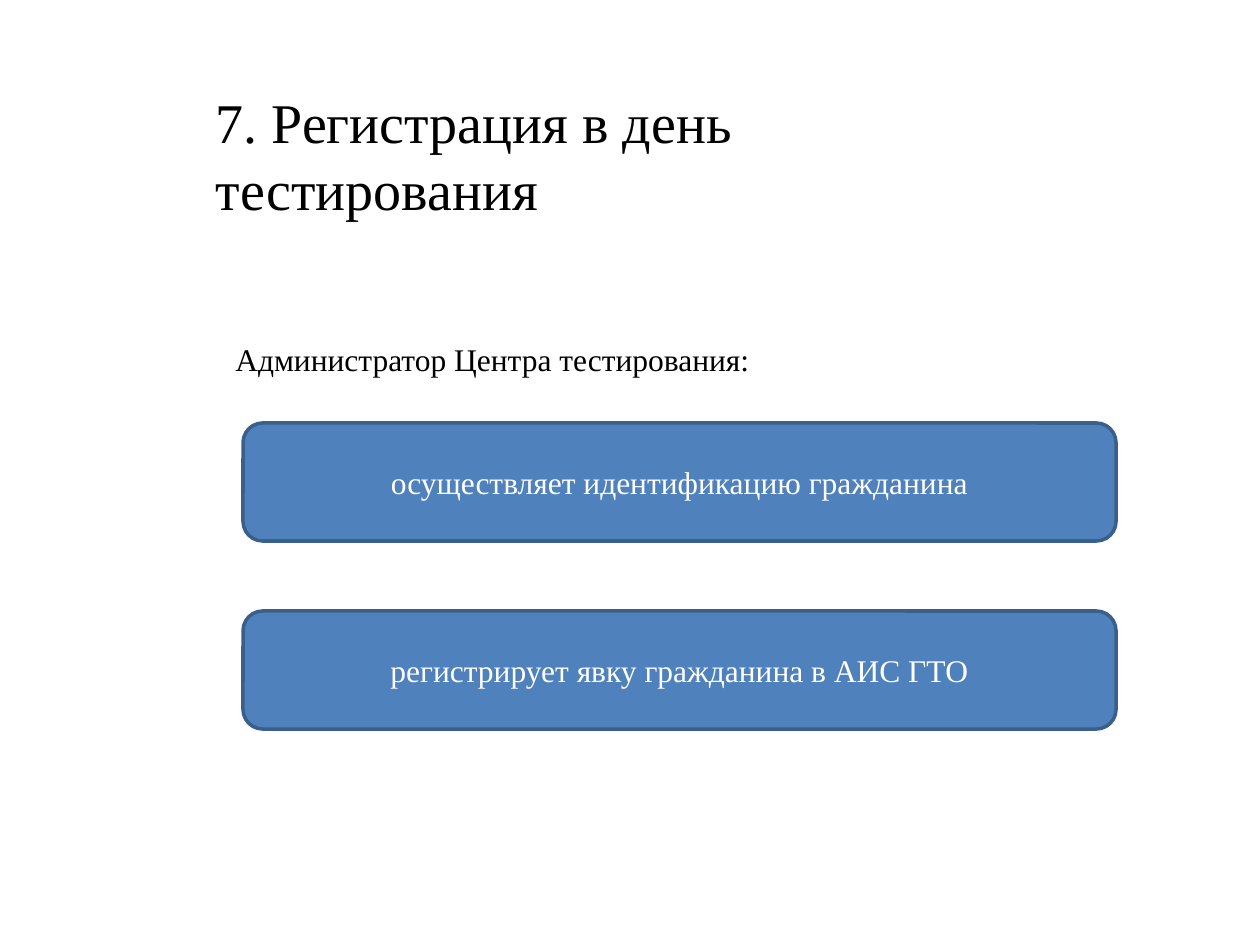
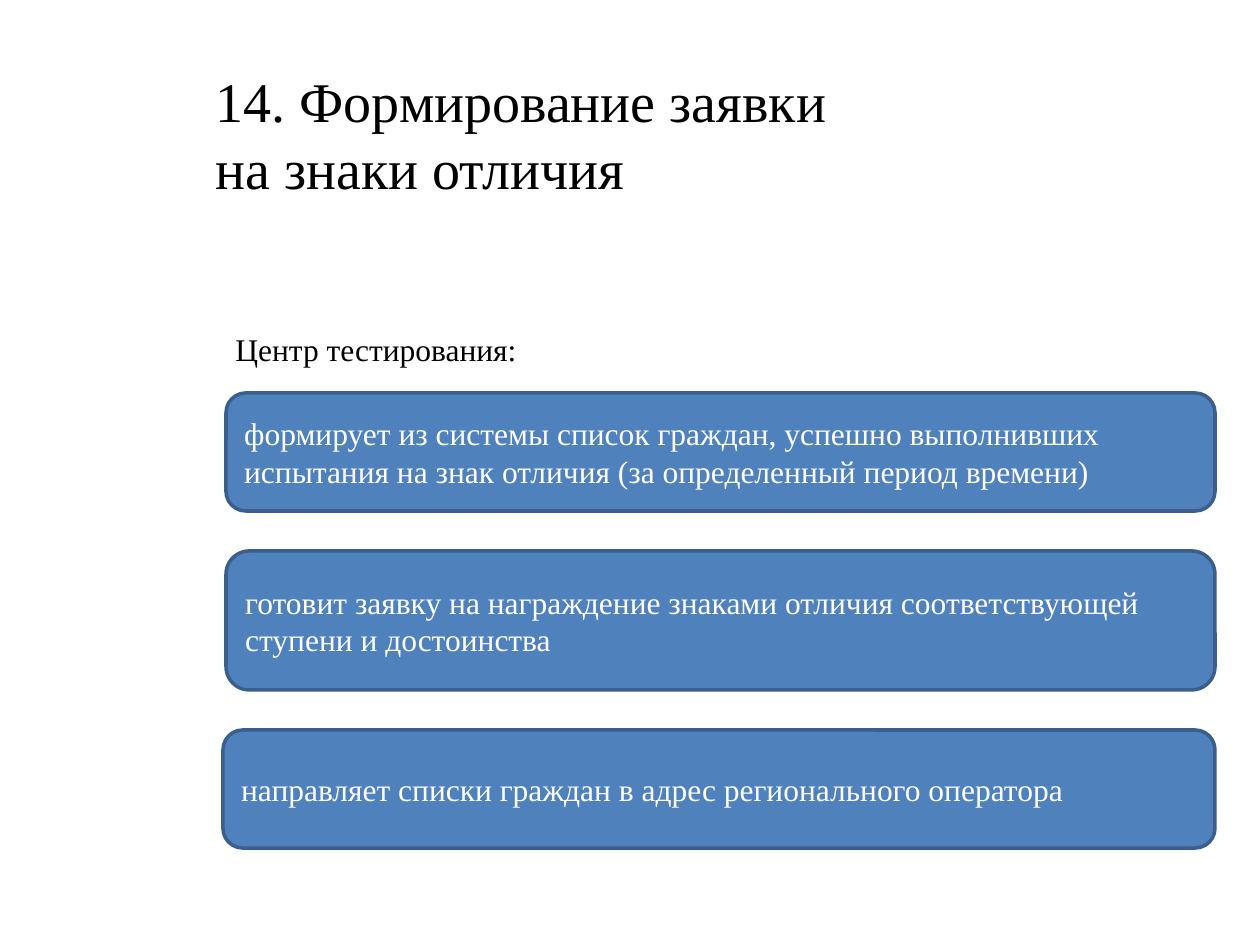
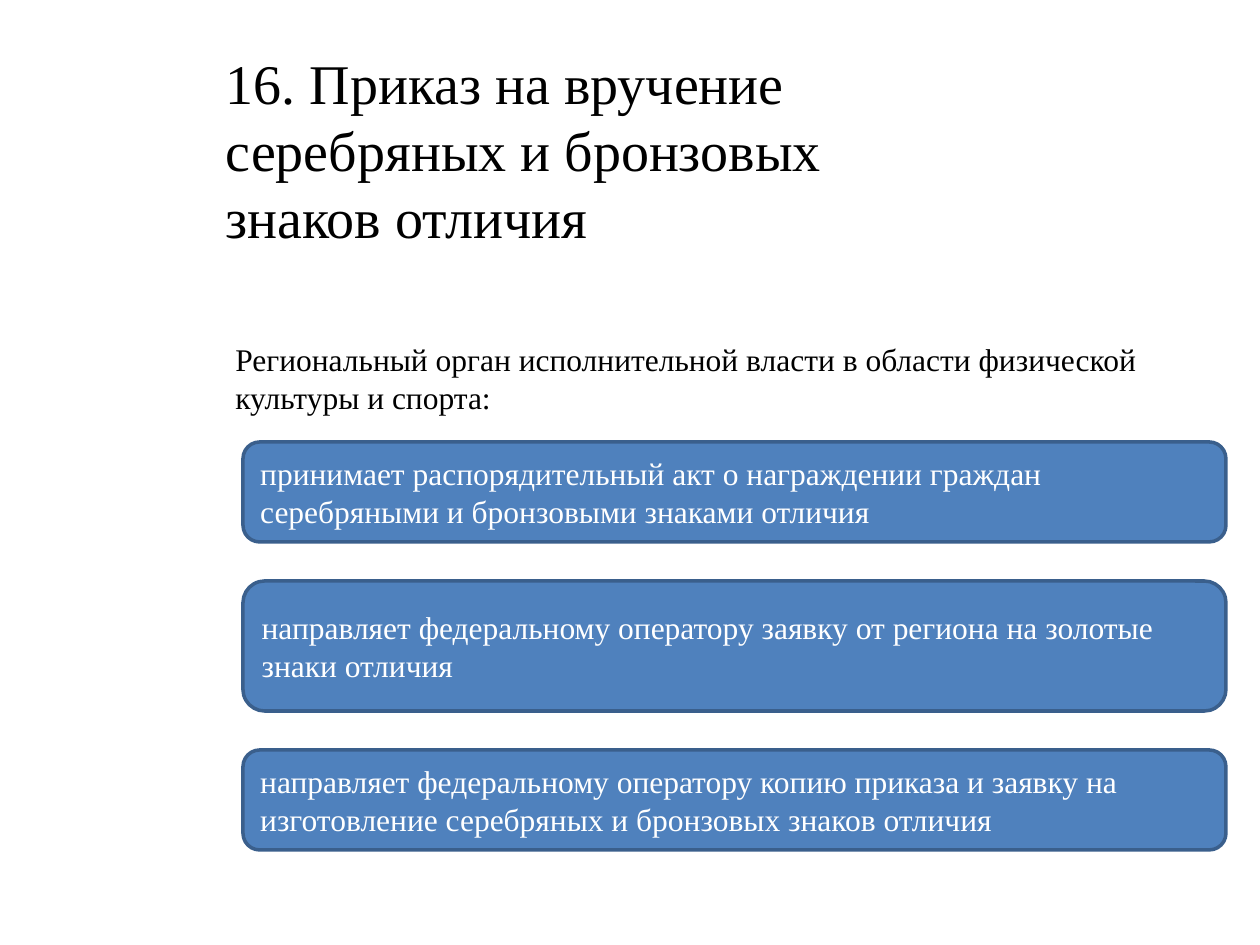
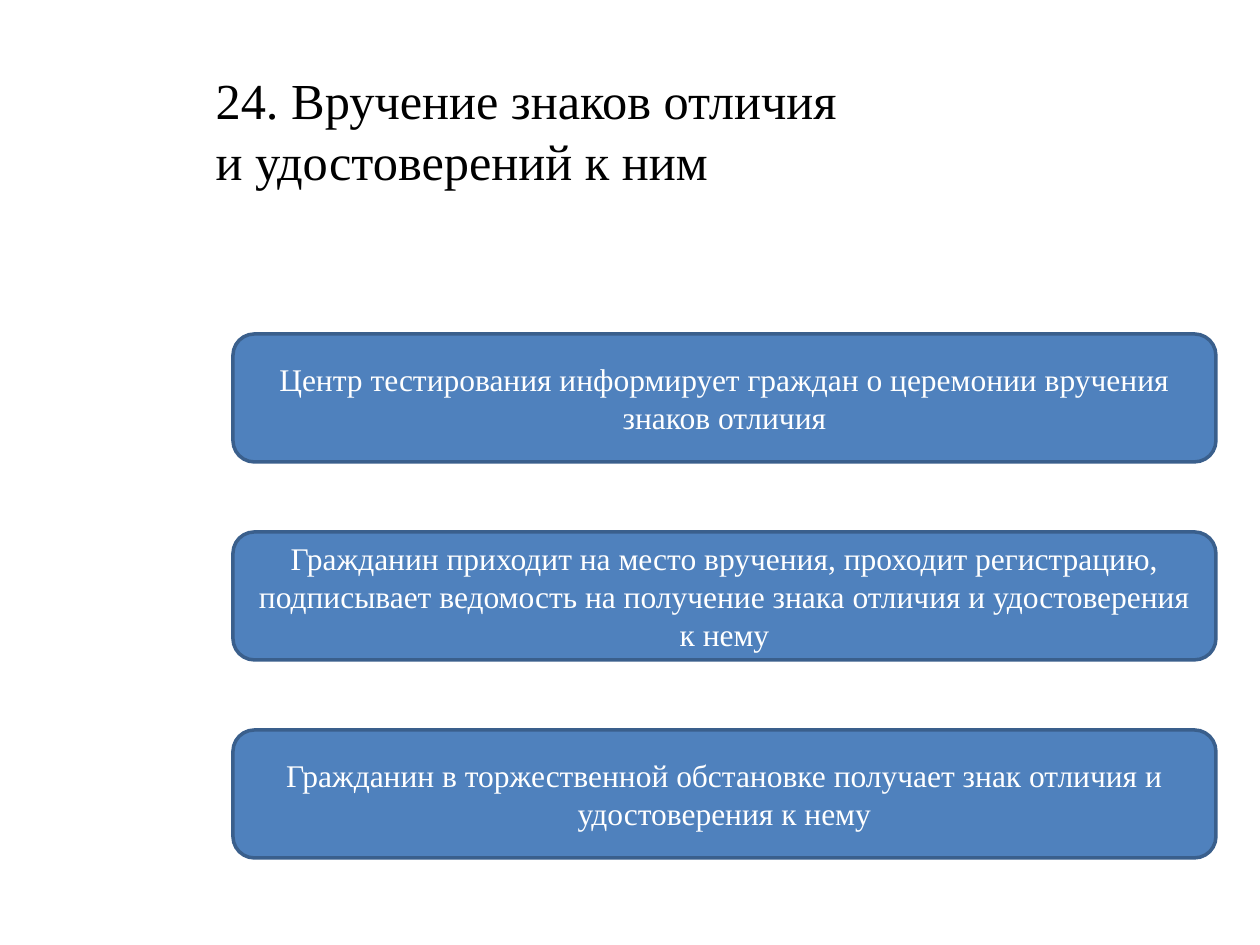
import pptx
import pptx.util
from pptx.dml.color import RGBColor
from pptx.enum.shapes import MSO_SHAPE
from pptx.enum.text import MSO_ANCHOR, MSO_AUTO_SIZE, PP_ALIGN

PX = 914400 / 126
SLIDE_W, SLIDE_H = 1260, 945
FONT = "Times New Roman"
BODY_SIZE = 18
COLORS = {"text": "000000", "box": "4F81BD", "box_line": "3A5F8C", "box_text": "FFFFFF"}

# title_at and intro_at: left, top, width, height in px
# steps: text, left, height; each slide's steps share a right edge and a gap
SLIDES = [
    {
        "title": "7. Регистрация в день тестирования",
        "title_at": (203, 76, 655, 158), "title_size": 32,
        "intro": "Администратор Центра тестирования:",
        "intro_at": (223, 334, 745, 50),
        "top": 423, "right": 1116, "gap": 70, "align": PP_ALIGN.CENTER,
        "steps": [
            ("осуществляет идентификацию гражданина", 243, 118),
            ("регистрирует явку гражданина в АИС ГТО", 243, 118),
        ],
    },
    {
        "title": "14. Формирование заявки на знаки отличия",
        "title_at": (203, 55, 645, 158), "title_size": 32,
        "intro": "Центр тестирования:",
        "intro_at": (223, 324, 635, 50),
        "top": 393, "right": 1215, "gap": 40, "align": PP_ALIGN.LEFT,
        "steps": [
            ("формирует из системы список граждан, успешно выполнивших "
             "испытания на знак отличия (за определенный период времени)", 226, 118),
            ("готовит заявку на награждение знаками отличия соответствующей "
             "ступени и достоинства", 226, 139),
            ("направляет списки граждан в адрес регионального оператора", 223, 118),
        ],
    },
    {
        "title": "16. Приказ на вручение серебряных и бронзовых знаков отличия",
        "title_at": (213, 45, 655, 208), "title_size": 32,
        "intro": "Региональный орган исполнительной власти в области физической "
                 "культуры и спорта:",
        "intro_at": (223, 334, 963, 89),
        "top": 442, "right": 1226, "gap": 39, "align": PP_ALIGN.LEFT,
        "steps": [
            ("принимает распорядительный акт о награждении граждан "
             "серебряными и бронзовыми знаками отличия", 243, 100),
            ("направляет федеральному оператору заявку от региона на золотые "
             "знаки отличия", 243, 130),
            ("направляет федеральному оператору копию приказа и заявку на "
             "изготовление серебряных и бронзовых знаков отличия", 243, 100),
        ],
    },
    {
        "title": "24. Вручение знаков отличия и удостоверений к ним",
        "title_at": (203, 26, 655, 208), "title_size": 28.8,
        "top": 334, "right": 1216, "gap": 70, "align": PP_ALIGN.CENTER,
        "steps": [
            ("Центр тестирования информирует граждан о церемонии вручения "
             "знаков отличия", 233, 128),
            ("Гражданин приходит на место вручения, проходит регистрацию, "
             "подписывает ведомость на получение знака отличия и удостоверения "
             "к нему", 233, 128),
            ("Гражданин в торжественной обстановке получает знак отличия и "
             "удостоверения к нему", 233, 128),
        ],
    },
]


def px(*lengths):
    return [pptx.util.Emu(round(n * PX)) for n in lengths]


def color(name):
    return RGBColor.from_string(COLORS[name])


def write(sp, text, size, color_name, align, anchor):
    tf = sp.text_frame
    tf.word_wrap = True
    tf.vertical_anchor = anchor
    tf.text = text
    p = tf.paragraphs[0]
    p.alignment = align
    font = p.runs[0].font
    font.name = FONT
    font.size = pptx.util.Pt(size)
    font.color.rgb = color(color_name)


def set_title(s, text, at, size):
    sp = s.shapes.title
    sp.left, sp.top, sp.width, sp.height = px(*at)
    write(sp, text, size, "text", PP_ALIGN.LEFT, MSO_ANCHOR.MIDDLE)
    sp.text_frame.auto_size = MSO_AUTO_SIZE.NONE


def add_intro(s, text, at):
    sp = s.shapes.add_textbox(*px(*at))
    write(sp, text, BODY_SIZE, "text", PP_ALIGN.LEFT, MSO_ANCHOR.TOP)
    sp.text_frame.auto_size = MSO_AUTO_SIZE.SHAPE_TO_FIT_TEXT


def add_steps(s, steps, top, right, gap, align):
    """Stack the step boxes downwards from top, all ending at right."""
    for text, left, height in steps:
        sp = s.shapes.add_shape(MSO_SHAPE.ROUNDED_RECTANGLE,
                                *px(left, top, right - left, height))
        sp.shadow.inherit = False
        sp.fill.solid()
        sp.fill.fore_color.rgb = color("box")
        sp.line.color.rgb = color("box_line")
        sp.line.width = pptx.util.Pt(2)
        write(sp, text, BODY_SIZE, "box_text", align, MSO_ANCHOR.MIDDLE)
        top += height + gap


def main():
    prs = pptx.Presentation()
    prs.slide_width, prs.slide_height = px(SLIDE_W, SLIDE_H)
    title_only = prs.slide_layouts[5]
    for item in SLIDES:
        s = prs.slides.add_slide(title_only)
        set_title(s, item["title"], item["title_at"], item["title_size"])
        if "intro" in item:
            add_intro(s, item["intro"], item["intro_at"])
        add_steps(s, item["steps"], item["top"], item["right"], item["gap"], item["align"])
    prs.save("out.pptx")


if __name__ == "__main__":
    main()
